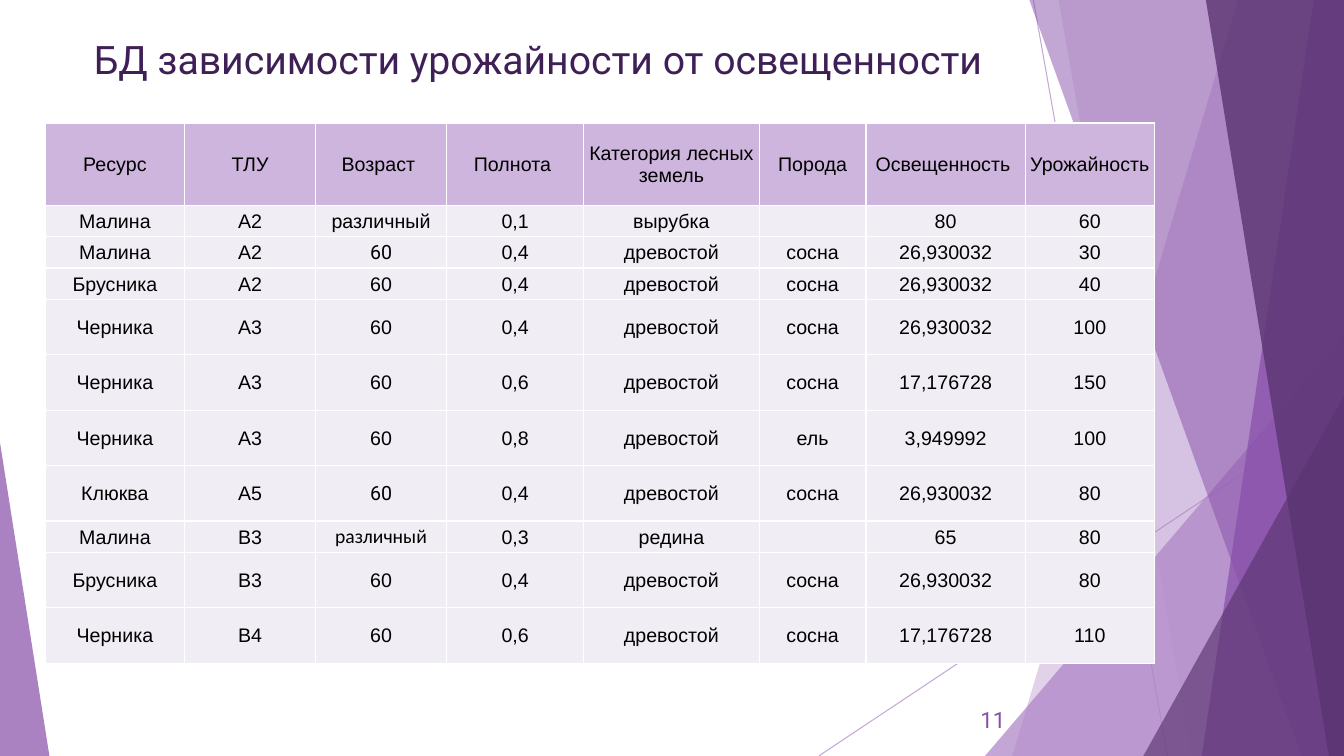
import lxml.etree
import pptx
import pptx.util
import pptx.dml.color
import pptx.enum.shapes
import pptx.enum.text
import pptx.oxml.ns

TITLE = "БД зависимости урожайности от освещенности"
PAGE = "11"
HEAD = ["Ресурс", "ТЛУ", "Возраст ", "Полнота ", "Категория лесных земель",
        "Порода", "Освещенность ", "Урожайность"]
DATA = [
    ["Малина", "А2", "различный", "0,1", "вырубка", "", "80", "60"],
    ["Малина", "А2", "60", "0,4", "древостой", "сосна", "26,930032", "30"],
    ["Брусника", "А2", "60", "0,4", "древостой", "сосна", "26,930032", "40"],
    ["Черника", "А3", "60", "0,4", "древостой", "сосна", "26,930032", "100"],
    ["Черника", "А3", "60", "0,6", "древостой", "сосна", "17,176728", "150"],
    ["Черника", "А3", "60", "0,8", "древостой", "ель", "3,949992", "100"],
    ["Клюква", "А5", "60", "0,4", "древостой", "сосна", "26,930032", "80"],
    ["Малина", "В3", "различный", "0,3", "редина", "", "65", "80"],
    ["Брусника", "В3", "60", "0,4", "древостой", "сосна", "26,930032", "80"],
    ["Черника", "В4", "60", "0,6", "древостой", "сосна", "17,176728", "110"],
]
FONTS = {(2, 2): "Roboto", (7, 2): "Roboto", (8, 2): "Calibri"}
COLS = [1.38, 1.3, 1.3, 1.36, 1.74, 1.06, 1.58, 1.28]
LOW, TALL = 0.31, 0.55
ROWS = [0.82, LOW, LOW, LOW, TALL, TALL, TALL, TALL, LOW, TALL, TALL]
COLORS = {"pale": "AD84C6", "mid": "874EA9", "deep": "5A3471", "title": "3F2056",
          "head": "CEB5DD", "body": "F1EDF5", "ink": "000000", "rule": "FFFFFF"}

# Shares of the slide, in percent
LINES = [(76.89, 0, 86.87, 100), (100, 53.73, 60.92, 100)]
DECOR = [
    ("band", (92.12, 75.32), "pale", 36),
    ("band", (78.77, 88.67), "pale", 20),
    ("wedge", (73.29, 44.4, 26.71, 1), "pale", 72),
    ("band", (76.59, 96.85), "mid", 50),
    ("band", (97.75, 89.42), "mid", 70),
    ("band", (89.72, 98.87), "deep", 80),
    ("wedge", (85.07, 52.4, 14.93, 1), "deep", 66),
    ("wedge", (0, 58.53, 3.68, 0), "mid", 70),
]

inch = pptx.util.Inches
point = pptx.util.Pt
qn = pptx.oxml.ns.qn
align = pptx.enum.text.PP_ALIGN
anchor = pptx.enum.text.MSO_ANCHOR

deck = pptx.Presentation()
deck.slide_width, deck.slide_height = inch(13.33), inch(7.5)
slide = deck.slides.add_slide(deck.slide_layouts[5])
shapes = slide.shapes


def across(share):
    return int(deck.slide_width * share / 100)


def down(share):
    return int(deck.slide_height * share / 100)


def tint(name):
    return pptx.dml.color.RGBColor.from_string(COLORS[name])


def fade(shape, share):
    for color in shape._element.spPr.iter(qn("a:srgbClr")):
        lxml.etree.SubElement(color, qn("a:alpha"), val=str(share * 1000))


def write(frame, text, side, size, font, color):
    frame.text = text
    para = frame.paragraphs[0]
    para.alignment = side
    for run in para.runs:
        run.font.size = point(size)
        run.font.name = font
        run.font.color.rgb = tint(color)
    if not text:
        para._p.get_or_add_endParaRPr().set("sz", str(size * 100))


def place(shape, left, top, width, height):
    shape.left, shape.top = inch(left), inch(top)
    shape.width, shape.height = inch(width), inch(height)


def edge(cell):
    props = cell._tc.get_or_add_tcPr()
    for spot, side in enumerate(("lnL", "lnR", "lnT", "lnB")):
        line = lxml.etree.Element(qn("a:" + side), w=str(point(1)))
        fill = lxml.etree.SubElement(line, qn("a:solidFill"))
        lxml.etree.SubElement(fill, qn("a:srgbClr"), val=COLORS["rule"])
        props.insert(spot, line)


for x1, y1, x2, y2 in LINES:
    line = shapes.add_connector(pptx.enum.shapes.MSO_CONNECTOR.STRAIGHT,
                                across(x1), down(y1), across(x2), down(y2))
    line.line.color.rgb = tint("pale")
    line.line.width = point(0.75)
    fade(line, 70)
    lxml.etree.SubElement(line._element.spPr, qn("a:effectLst"))

for kind, spots, color, share in DECOR:
    if kind == "band":
        high, base = spots
        build = shapes.build_freeform(across(high), 0)
        build.add_line_segments([(across(100), 0), (across(100), down(100)),
                                 (across(base), down(100))])
        shape = build.convert_to_shape()
    else:
        left, top, width, apex = spots
        shape = shapes.add_shape(pptx.enum.shapes.MSO_SHAPE.ISOSCELES_TRIANGLE,
                                 across(left), down(top), across(width), down(100 - top))
        shape.adjustments[0] = apex
    shape.shadow.inherit = False
    shape.fill.solid()
    shape.fill.fore_color.rgb = tint(color)
    shape.line.fill.background()
    fade(shape, share)

title = shapes.title
place(title, 0.54, 0.3, 9.59, 0.95)
title.text_frame.auto_size = pptx.enum.text.MSO_AUTO_SIZE.NONE
title.text_frame.vertical_anchor = anchor.TOP
write(title.text_frame, TITLE, align.CENTER, 28, "Roboto", "title")

page = shapes.add_textbox(inch(9.32), inch(6.94), inch(0.75), inch(0.4))
page.text_frame.word_wrap = True
page.text_frame.vertical_anchor = anchor.MIDDLE
write(page.text_frame, PAGE, align.RIGHT, 16, "Roboto", "mid")

grid = shapes.add_table(len(ROWS), len(COLS), inch(0.45), inch(1.22),
                        inch(sum(COLS)), inch(sum(ROWS))).table
grid.first_row = grid.horz_banding = False
for col, width in zip(grid.columns, COLS):
    col.width = inch(width)
for row, height in zip(grid.rows, ROWS):
    row.height = inch(height)
for r, texts in enumerate([HEAD] + DATA):
    for c, text in enumerate(texts):
        cell = grid.cell(r, c)
        cell.margin_left = cell.margin_right = cell.margin_top = inch(0.01)
        cell.margin_bottom = 0
        cell.vertical_anchor = anchor.MIDDLE
        cell.fill.solid()
        cell.fill.fore_color.rgb = tint("body" if r else "head")
        write(cell.text_frame, text, align.CENTER, 14, FONTS.get((r, c), "Arial"), "ink")
        edge(cell)

deck.save("out.pptx")
